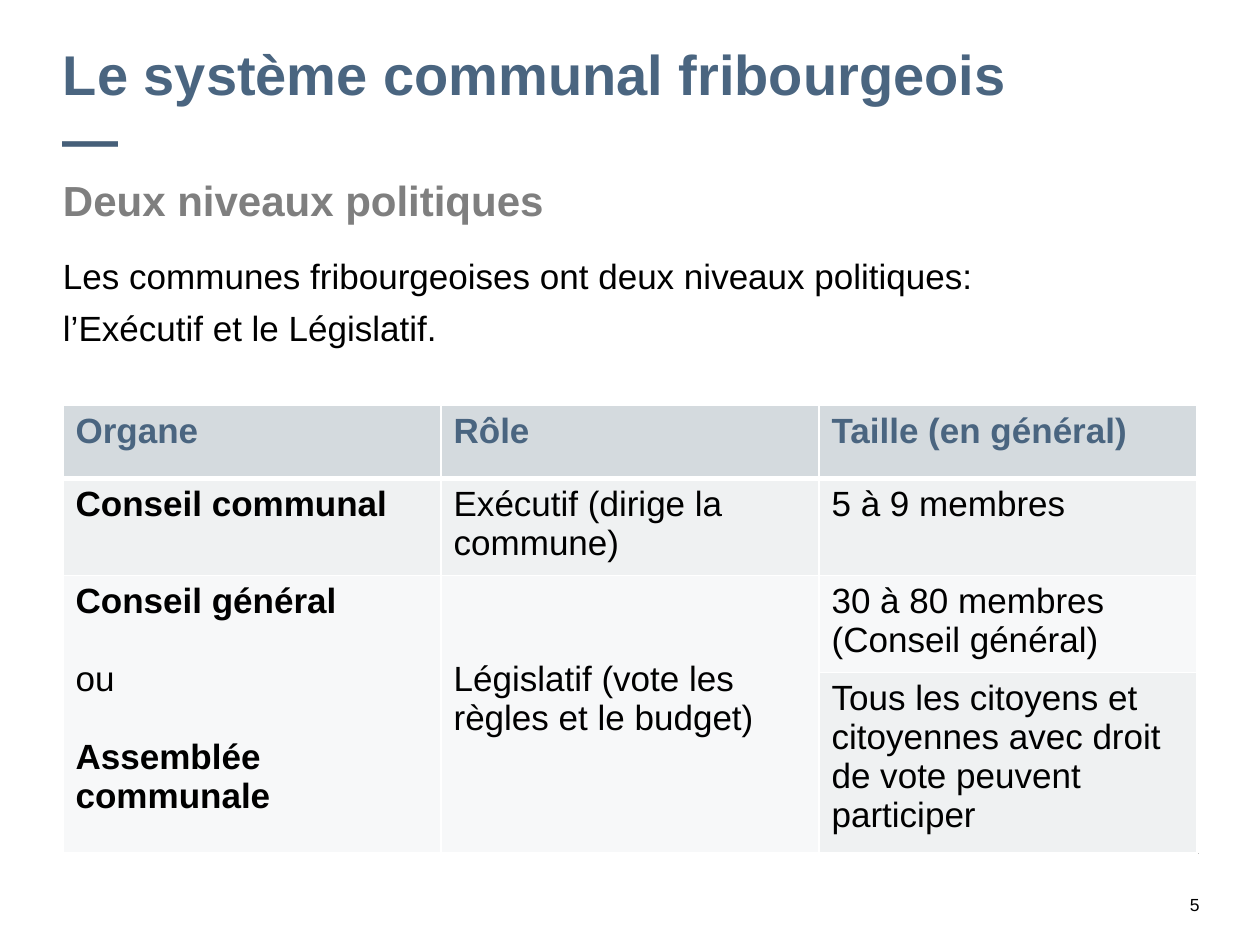
from dataclasses import dataclass
from lxml.etree import SubElement
from pptx import Presentation
from pptx.dml.color import RGBColor
from pptx.enum.shapes import MSO_CONNECTOR
from pptx.enum.text import MSO_ANCHOR, PP_ALIGN
from pptx.oxml.ns import qn
from pptx.util import Inches, Pt


@dataclass(frozen=True)
class Theme:
    font: str = "Arial"
    title: str = "4A6580"
    dash: str = "465F79"
    subtitle: str = "7F7F7F"
    text: str = "000000"
    rule: str = "C0C0C0"
    border: str = "FFFFFF"
    head: str = "D4DADE"
    band: tuple = ("EFF1F2", "F7F8F9")
    title_size: int = 32
    subtitle_size: int = 24
    body_size: int = 20
    number_size: int = 10


T = Theme()
W, H = Inches(10), Inches(7.5)
LEFT, WIDTH = 0.05, 0.9
ROWS = (0.58, 0.77, 0.77, 1.34)
CELL_LINE = 22.4


def box(x, y, w, h):
    return int(x * W), int(y * H), int(w * W), int(h * H)


def add_run(p, text, size=T.body_size, color=T.text, bold=False):
    r = p.add_run()
    r.text = text
    r.font.name, r.font.size, r.font.bold = T.font, Pt(size), bold
    r.font.color.rgb = RGBColor.from_string(color)


def add_paragraph(tf, text, first=True, align=None, before=0, after=0, **fmt):
    p = tf.paragraphs[0] if first else tf.add_paragraph()
    p.alignment = align
    p.space_before, p.space_after = Pt(before), Pt(after)
    add_run(p, text, **fmt)
    return p


def text_frame(s, area):
    tf = s.shapes.add_textbox(*area).text_frame
    tf.word_wrap = True
    tf.margin_left = tf.margin_right = tf.margin_top = tf.margin_bottom = 0
    return tf


def title(s, area):
    p = add_paragraph(text_frame(s, area), "Le système communal fribourgeois",
                      size=T.title_size, color=T.title, bold=True)
    p.line_spacing = Pt(37)
    p.add_line_break()
    add_run(p, "—", size=T.title_size, color=T.dash, bold=True)


def subtitle(s, area):
    add_paragraph(text_frame(s, area), "Deux niveaux politiques", after=6,
                  size=T.subtitle_size, color=T.subtitle, bold=True)


def intro(s, area):
    tf = text_frame(s, area)
    lines = ("Les communes fribourgeoises ont deux niveaux politiques:",
             "l’Exécutif et le Législatif.")
    for i, line in enumerate(lines):
        add_paragraph(tf, line, first=i == 0, after=6)


def style_cell(cell, fill, bottom=1, top=1):
    tcPr = cell._tc.get_or_add_tcPr()
    for side, width in (("L", 1), ("R", 1), ("T", top), ("B", bottom)):
        ln = SubElement(tcPr, qn(f"a:ln{side}"), w=str(Pt(width)))
        SubElement(SubElement(ln, qn("a:solidFill")), qn("a:srgbClr"), val=T.border)
    cell.fill.solid()
    cell.fill.fore_color.rgb = RGBColor.from_string(fill)
    cell.vertical_anchor = MSO_ANCHOR.TOP


def organs_table(s, area):
    tbl = s.shapes.add_table(len(ROWS), 3, *area).table
    for row, height in zip(tbl.rows, ROWS):
        row.height = Inches(height)
    for i in range(len(ROWS)):
        for j in range(3):
            fill = T.head if i == 0 else T.band[1] if i == 3 and j < 2 else T.band[(i - 1) % 2]
            style_cell(tbl.cell(i, j), fill, bottom=3 if i == 0 else 1, top=3 if i == 1 else 1)
    for j in (0, 1):
        tbl.cell(2, j).merge(tbl.cell(3, j))

    for j, head in enumerate(("Organe", "Rôle", "Taille (en général)")):
        add_paragraph(tbl.cell(0, j).text_frame, head, color=T.title, bold=True)
    texts = {
        (1, 0): (("Conseil communal", True),),
        (1, 1): (("Exécutif (dirige la commune)", False),),
        (1, 2): (("5 à 9 membres", False),),
        (2, 0): (("Conseil général", True), ("ou", False), ("Assemblée communale", True)),
        (2, 1): (("Législatif (vote les règles et le budget)", False),),
        (2, 2): (("30 à 80 membres (Conseil général)", False),),
        (3, 2): (("Tous les citoyens et citoyennes avec droit de vote peuvent participer", False),),
    }
    for (i, j), parts in texts.items():
        for k, (text, bold) in enumerate(parts):
            add_paragraph(tbl.cell(i, j).text_frame, text, first=k == 0,
                          before=CELL_LINE if k else 0, bold=bold)
    tbl.cell(2, 1).margin_top = Inches(0.05) + Pt(2 * CELL_LINE)


def footer(s, area):
    x, y, w, h = area
    line = s.shapes.add_connector(MSO_CONNECTOR.STRAIGHT, x, y, x + w, y)
    line.line.color.rgb = RGBColor.from_string(T.rule)
    line.line.width = Pt(0.25)
    SubElement(line._element.spPr, qn("a:effectLst"))
    number_h = Inches(0.17)
    tf = text_frame(s, (x, y + h - number_h, w, number_h))
    add_paragraph(tf, "5", align=PP_ALIGN.RIGHT, size=T.number_size)


def main():
    prs = Presentation()
    prs.slide_width, prs.slide_height = W, H
    s = prs.slides.add_slide(prs.slide_layouts[6])
    footer(s, box(LEFT, 0.903, WIDTH + 0.002, 0.066))
    title(s, box(LEFT, 0.044, WIDTH, 0.139))
    subtitle(s, box(LEFT, 0.185, WIDTH, 0.053))
    intro(s, box(LEFT, 0.269, WIDTH, 0.101))
    organs_table(s, box(LEFT, 0.429, WIDTH, sum(ROWS) / 7.5))
    prs.save("out.pptx")


if __name__ == "__main__":
    main()
